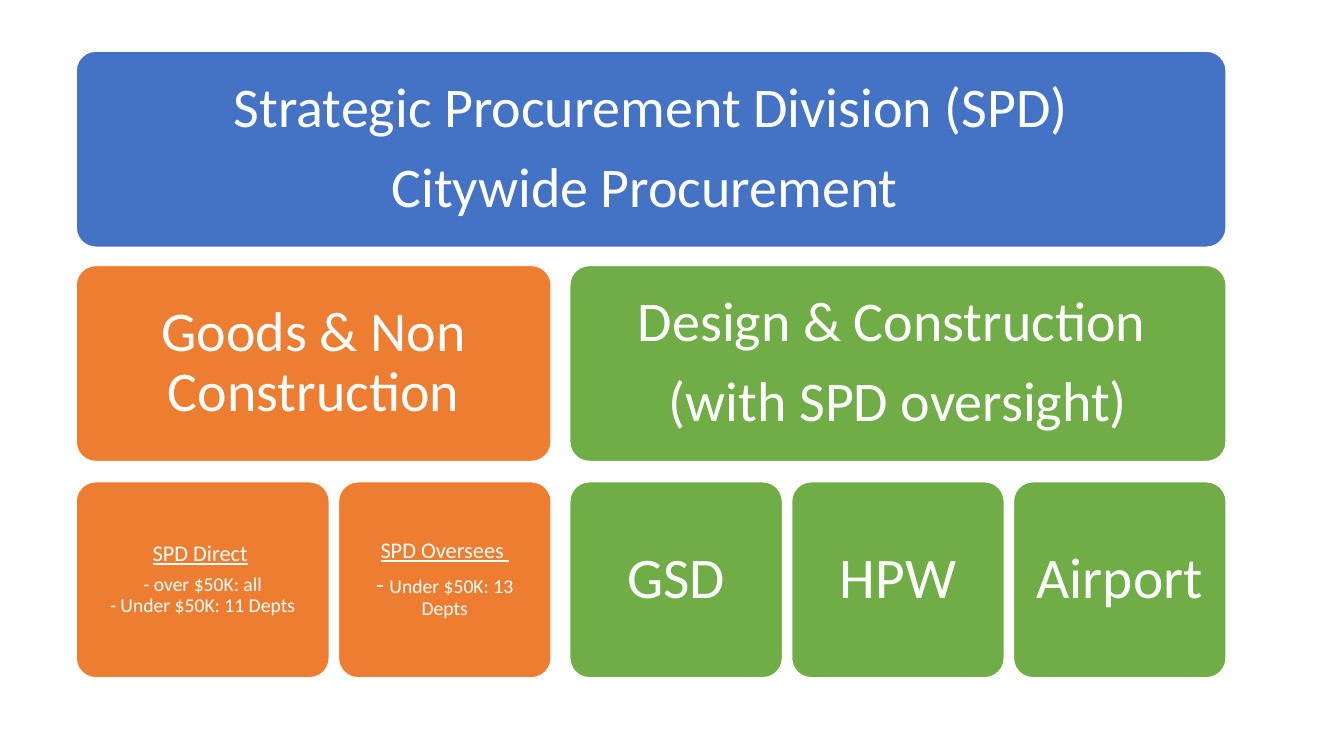
from dataclasses import dataclass

from pptx import Presentation
from pptx.dml.color import RGBColor
from pptx.enum.shapes import MSO_SHAPE
from pptx.enum.text import MSO_ANCHOR, PP_ALIGN
from pptx.util import Cm, Pt


@dataclass(frozen=True)
class Theme:
    font: str = "Calibri"
    white: RGBColor = RGBColor(0xFF, 0xFF, 0xFF)
    division: RGBColor = RGBColor(0x44, 0x72, 0xC4)
    goods: RGBColor = RGBColor(0xED, 0x7D, 0x31)
    design: RGBColor = RGBColor(0x70, 0xAD, 0x47)
    heading: int = 40
    department: int = 41
    subheading: int = 16
    dash: int = 18
    detail: int = 14
    line_spacing: float = 0.9
    space_share: float = 0.35
    heading_inset: float = 0.4
    detail_inset: float = 0.32


class OrgChart:
    def __init__(self, page, theme):
        self.page = page
        self.theme = theme

    def card(self, left, top, width, height, color, inset):
        box = self.page.shapes.add_shape(
            MSO_SHAPE.ROUNDED_RECTANGLE, Cm(left), Cm(top), Cm(width), Cm(height))
        box.adjustments[0] = 0.1
        box.shadow.inherit = False
        box.fill.solid()
        box.fill.fore_color.rgb = color
        box.line.color.rgb = self.theme.white
        box.line.width = Pt(1)
        frame = box.text_frame
        frame.word_wrap = True
        frame.vertical_anchor = MSO_ANCHOR.MIDDLE
        frame.margin_left = frame.margin_right = Cm(inset)
        frame.margin_top = frame.margin_bottom = Cm(inset)
        return frame

    def paragraph(self, frame, text, size, spaced=True):
        first = frame.paragraphs[0]
        para = frame.add_paragraph() if first.runs else first
        para.alignment = PP_ALIGN.CENTER
        para.line_spacing = self.theme.line_spacing
        para.space_before = Pt(0)
        para.space_after = Pt(size * self.theme.space_share if spaced else 0)
        para.font.name = self.theme.font
        para.font.size = Pt(size)
        para.font.color.rgb = self.theme.white
        span = para.add_run()
        span.text = text
        return para

    def heading_card(self, left, top, width, height, color, lines, size):
        frame = self.card(left, top, width, height, color, self.theme.heading_inset)
        for line in lines:
            self.paragraph(frame, line, size)

    def detail_card(self, left, top, width, height, color, heading, details):
        frame = self.card(left, top, width, height, color, self.theme.detail_inset)
        title = self.paragraph(frame, heading, self.theme.subheading)
        title.runs[0].font.underline = True
        for detail in details:
            self.paragraph(frame, detail, self.theme.detail, spaced=False)
        return frame


def main():
    deck = Presentation()
    deck.slide_width = Cm(33.87)
    deck.slide_height = Cm(19.05)
    theme = Theme()
    chart = OrgChart(deck.slides.add_slide(deck.slide_layouts[6]), theme)

    height, gap, group_gap = 4.94, 0.23, 0.47
    division_top, branch_top, unit_top = 1.29, 6.69, 12.14
    unit_width, direct_width = 5.36, 6.38
    departments = ["GSD", "HPW", "Airport"]
    goods_left = 1.92
    oversees_left = goods_left + direct_width + gap
    goods_width = direct_width + gap + unit_width
    design_left = goods_left + goods_width + group_gap
    step = unit_width + gap
    design_width = len(departments) * step - gap

    chart.heading_card(
        goods_left, division_top, goods_width + group_gap + design_width, height, theme.division,
        ["Strategic Procurement Division (SPD)", "Citywide Procurement "], theme.heading)
    chart.heading_card(
        goods_left, branch_top, goods_width, height, theme.goods,
        ["Goods & Non Construction"], theme.heading)
    direct = chart.detail_card(
        goods_left, unit_top, direct_width, height, theme.goods,
        "SPD Direct", ["- over $50K: all", "- Under $50K: 11 Depts"])
    direct.paragraphs[0].add_run().text = " "
    oversees = chart.detail_card(
        oversees_left, unit_top, unit_width, height, theme.goods,
        "SPD Oversees ", ["- "])
    dash_line = oversees.paragraphs[1]
    dash_line.runs[0].font.size = Pt(theme.dash)
    dash_line.add_run().text = "Under $50K: 13 Depts"

    chart.heading_card(
        design_left, branch_top, design_width, height, theme.design,
        ["Design & Construction ", "(with SPD oversight)"], theme.heading)
    for index, name in enumerate(departments):
        chart.heading_card(
            design_left + index * step, unit_top, unit_width, height,
            theme.design, [name], theme.department)

    deck.save("out.pptx")


if __name__ == "__main__":
    main()
